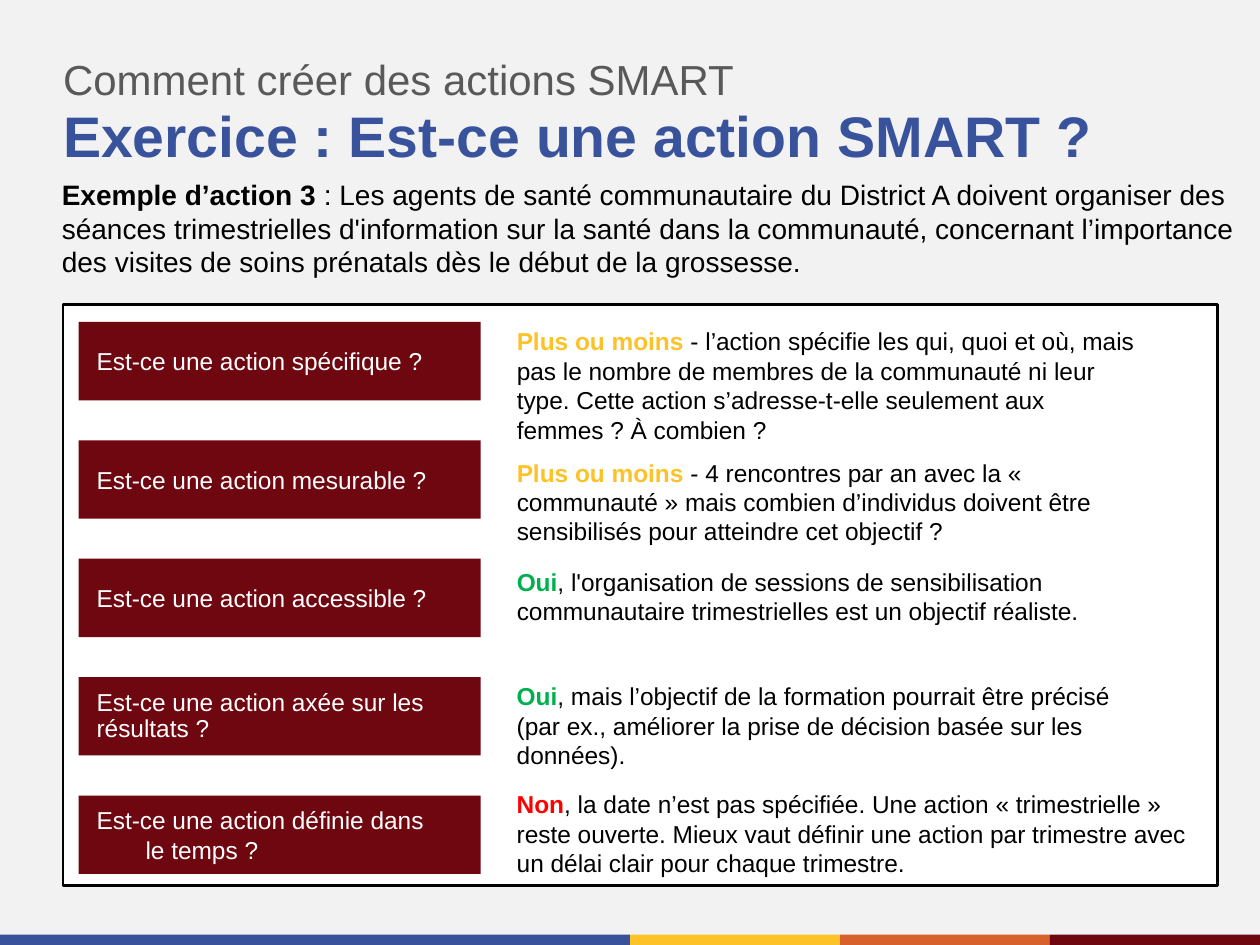
import pptx
import pptx.util
import pptx.dml.color
import pptx.enum.shapes
import pptx.enum.text

Pt = pptx.util.Pt
COLORS = {
    "background": "F2F2F2", "blue": "38529C", "yellow": "FDC228",
    "orange": "D8602C", "maroon": "6F0710", "gray": "595959",
    "black": "000000", "white": "FFFFFF", "green": "00B050", "red": "FF0000",
}


def color(name):
    return pptx.dml.color.RGBColor.from_string(COLORS[name])


def add_box(page, place, fill=None, spans=(), size=13.7, spacing=1.0):
    """Add a filled rectangle or a plain text box; spans are (text, color, bold)."""
    place = [Pt(length) for length in place]
    if fill:
        box = page.shapes.add_shape(pptx.enum.shapes.MSO_SHAPE.RECTANGLE, *place)
        box.shadow.inherit = False
        box.fill.solid()
        box.fill.fore_color.rgb = color(fill)
        box.line.fill.background()
    else:
        box = page.shapes.add_textbox(*place)
    frame = box.text_frame
    frame.word_wrap = True
    frame.margin_left = frame.margin_right = frame.margin_top = frame.margin_bottom = 0
    para = frame.paragraphs[0]
    para.alignment = pptx.enum.text.PP_ALIGN.LEFT
    para.line_spacing = spacing
    for text, name, bold in spans:
        span = para.add_run()
        span.text = text
        span.font.name = "Arial"
        span.font.size = Pt(size)
        span.font.bold = bold
        span.font.color.rgb = color(name)
    return box


deck = pptx.Presentation()
deck.slide_width, deck.slide_height = Pt(705.6), Pt(529.2)
page = deck.slides.add_slide(deck.slide_layouts[6])
page.background.fill.solid()
page.background.fill.fore_color.rgb = color("background")

# Footer stripes
stripe_left = 0
for name, width in [("blue", 352.8), ("yellow", 117.6), ("orange", 117.6), ("maroon", 117.6)]:
    add_box(page, (stripe_left, 523.4, width, 5.8), name)
    stripe_left += width

# Headings and example
add_box(page, (35.3, 60.5, 635, 34.6), size=32, spacing=0.9,
        spans=[("Exercice : Est-ce une action SMART ?", "blue", True)])
add_box(page, (35.3, 33.1, 635, 25.9), size=23.5, spacing=0.9,
        spans=[("Comment créer des actions SMART", "gray", False)])
add_box(page, (34.6, 99.4, 660.2, 56.9), size=15.7, spans=[
    ("Exemple d’action 3 ", "black", True),
    (": Les agents de santé communautaire du District A doivent organiser des séances "
     "trimestrielles d'information sur la santé dans la communauté, concernant "
     "l’importance des visites de soins prénatals dès le début de la grossesse.",
     "black", False),
])

# White panel
panel = add_box(page, (35.3, 170.6, 646.6, 325.4), "white")
panel.line.color.rgb = color("black")
panel.line.width = Pt(1.5)

# Question, line spacing, hanging indent, answer top, answer width, verdict, color, reason
rows = [
    ("Est-ce une action spécifique ?", 1.0, 0, 182.9, 354.2, "Plus ou moins", "yellow",
     " - l’action spécifie les qui, quoi et où, mais pas le nombre de membres de la "
     "communauté ni leur type. Cette action s’adresse-t-elle seulement aux femmes ? "
     "À combien ?"),
    ("Est-ce une action mesurable ?", 1.0, 0, 256.3, 354.2, "Plus ou moins", "yellow",
     " - 4 rencontres par an avec la « communauté » mais combien d’individus doivent "
     "être sensibilisés pour atteindre cet objectif ?"),
    ("Est-ce une action accessible ?", 1.0, 0, 317.5, 380.9, "Oui", "green",
     ", l'organisation de sessions de sensibilisation communautaire trimestrielles est "
     "un objectif réaliste."),
    ("Est-ce une action axée sur les résultats ?", 0.9, 0, 381.6, 360, "Oui", "green",
     ", mais l’objectif de la formation pourrait être précisé (par ex., améliorer la "
     "prise de décision basée sur les données)."),
    ("Est-ce une action définie dans le temps ?", 1.0, 27.4, 442.1, 377.3, "Non", "red",
     ", la date n’est pas spécifiée. Une action « trimestrielle » reste ouverte. Mieux "
     "vaut définir une action par trimestre avec un délai clair pour chaque trimestre."),
]
for index, (question, spacing, hanging, top, width, verdict, name, reason) in enumerate(rows):
    card = add_box(page, (44, 180.3 + 66.3 * index, 225.2, 43.9), "maroon",
                   [(question, "white", False)], spacing=spacing)
    card.text_frame.margin_left = Pt(10.1)
    card.text_frame.margin_right = Pt(17.9)
    card.text_frame.vertical_anchor = pptx.enum.text.MSO_ANCHOR.MIDDLE
    if hanging:
        properties = card.text_frame.paragraphs[0]._p.get_or_add_pPr()
        properties.set("marL", str(Pt(hanging)))
        properties.set("indent", str(-Pt(hanging)))
    line_count = 4 if index == 0 else 2 if index == 2 else 3
    add_box(page, (289.4, top, width, 16.5 * line_count),
            spans=[(verdict, name, True), (reason, "black", False)])

deck.save("out.pptx")
